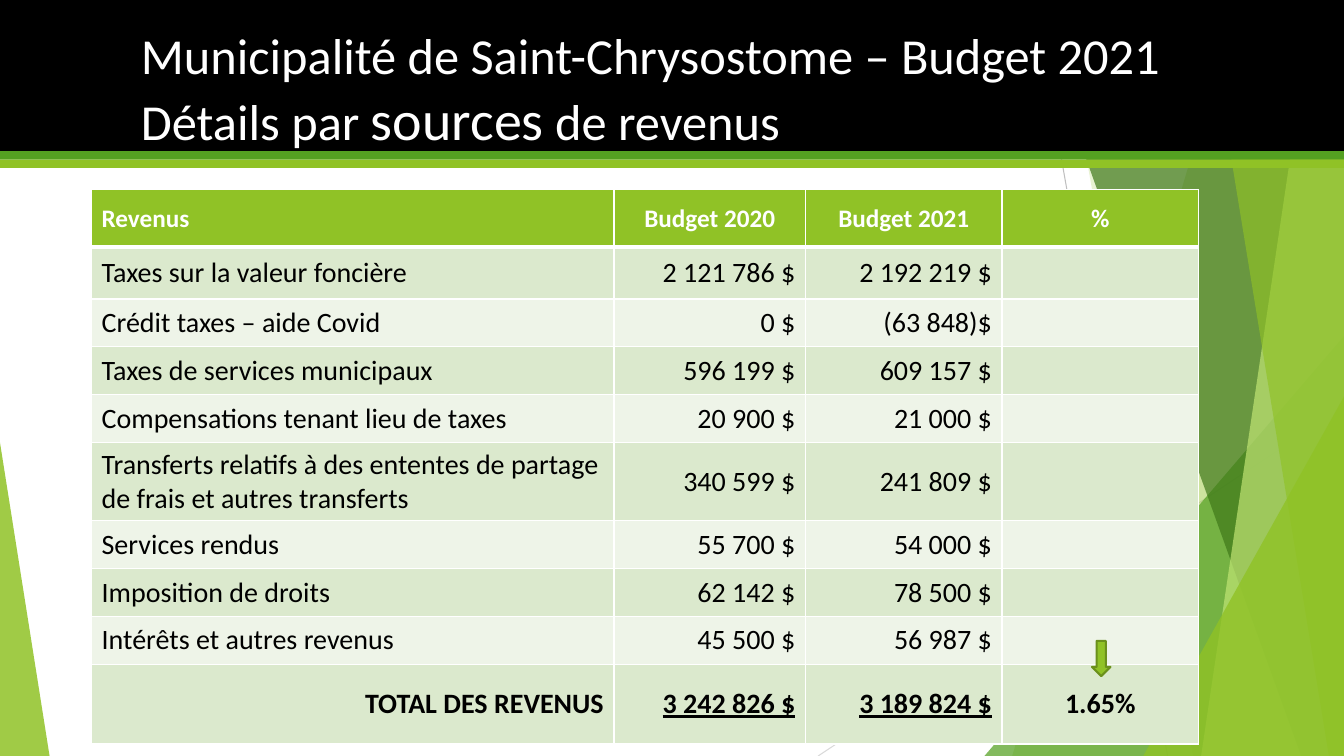
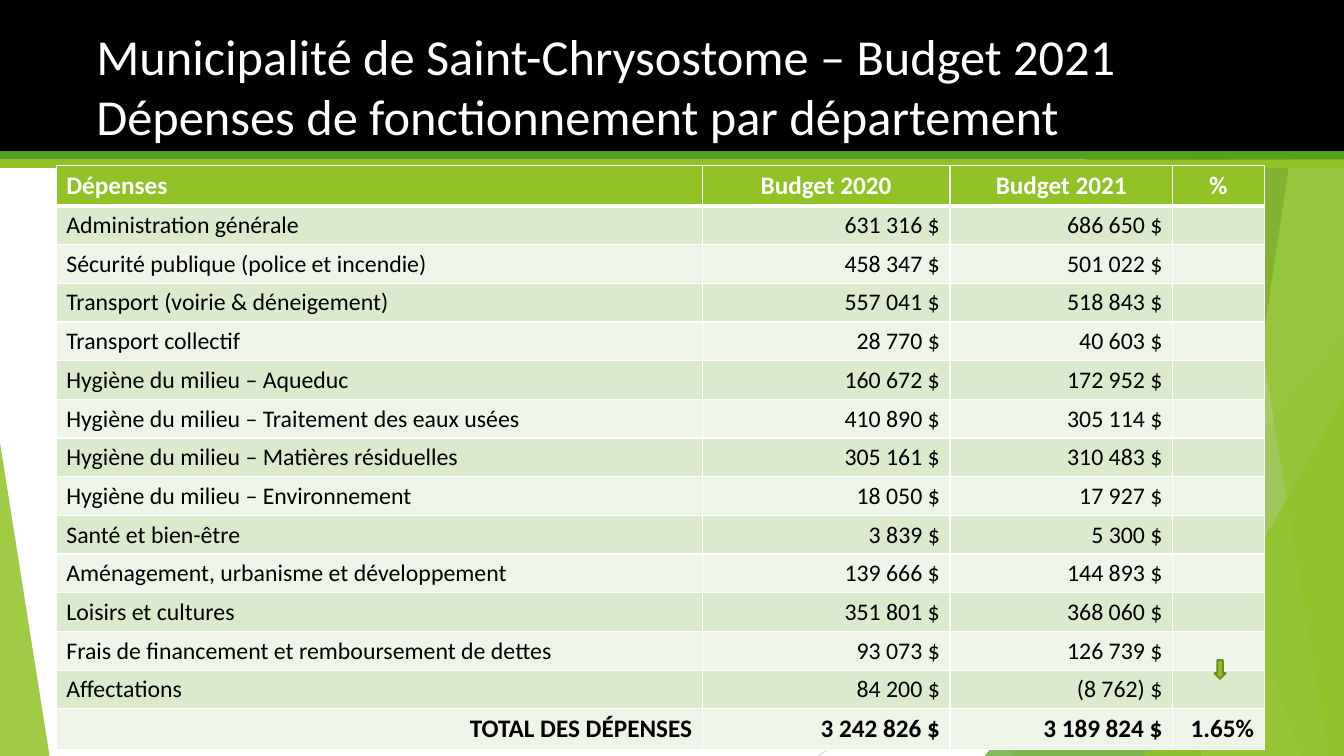
from lxml.etree import SubElement
from pptx import Presentation
from pptx.dml.color import RGBColor
from pptx.enum.shapes import MSO_CONNECTOR, MSO_SHAPE
from pptx.enum.text import MSO_ANCHOR, PP_ALIGN
from pptx.oxml.ns import qn
from pptx.util import Inches, Pt

COLUMNS, ROWS = 16, 9
UNIT = Inches(7.5) / ROWS
FONT = "Calibri"
BLACK, WHITE = "000000", "FFFFFF"
LIME, GREEN, FOREST, PALE = "90C226", "54A021", "3F7819", "C0E474"
ARROW_EDGE = "6B901C"
STRIPES = ("DBE9CD", "EEF4E8")
LEFT, CENTER, RIGHT = PP_ALIGN.LEFT, PP_ALIGN.CENTER, PP_ALIGN.RIGHT

RAYS = [(12.3, 0, 13.9, ROWS, "BFBFBF"), (COLUMNS, 4.84, 9.74, ROWS, "D9D9D9")]
BACK_PANELS = [(14.74, 12.05, LIME, 30), (12.6, 14.2, LIME, 20)]
FRONT_PANELS = [(12.25, 15.49, FOREST, 70), (15.64, 14.3, PALE, 70), (14.35, 15.82, LIME, 65)]
BANDS = [(0, 1.8, BLACK), (1.8, 0.1, GREEN), (1.9, 0.1, LIME)]

REVENUES = [
    ("Revenus", "Budget 2020", "Budget 2021", "%"),
    ("Taxes sur la valeur foncière", "2 121 786 $", "2 192 219 $", ""),
    ("Crédit taxes – aide Covid", "0 $", "(63 848)$", ""),
    ("Taxes de services municipaux", "596 199 $", "609 157 $", ""),
    ("Compensations tenant lieu de taxes", "20 900 $", "21 000 $", ""),
    ("Transferts relatifs à des ententes de partage de frais et autres transferts",
     "340 599 $", "241 809 $", ""),
    ("Services rendus", "55 700 $", "54 000 $", ""),
    ("Imposition de droits", "62 142 $", "78 500 $", ""),
    ("Intérêts et autres revenus", "45 500 $", "56 987 $", ""),
    ("TOTAL DES REVENUS", "3 242 826 $", "3 189 824 $", "1.65%"),
]
EXPENSES = [
    ("Dépenses", "Budget 2020", "Budget 2021", "%"),
    ("Administration générale", "631 316 $", "686 650 $", ""),
    ("Sécurité publique (police et incendie)", "458 347 $", "501 022 $", ""),
    ("Transport (voirie & déneigement)", "557 041 $", "518 843 $", ""),
    ("Transport collectif", "28 770 $", "40 603 $", ""),
    ("Hygiène du milieu – Aqueduc", "160 672 $", "172 952 $", ""),
    ("Hygiène du milieu – Traitement des eaux usées", "410 890 $", "305 114 $", ""),
    ("Hygiène du milieu – Matières résiduelles", "305 161 $", "310 483 $", ""),
    ("Hygiène du milieu – Environnement", "18 050 $", "17 927 $", ""),
    ("Santé et bien-être", "3 839 $", "5 300 $", ""),
    ("Aménagement, urbanisme et développement", "139 666 $", "144 893 $", ""),
    ("Loisirs et cultures", "351 801 $", "368 060 $", ""),
    ("Frais de financement et remboursement de dettes", "93 073 $", "126 739 $", ""),
    ("Affectations", "84 200 $", "(8 762) $", ""),
    ("TOTAL DES DÉPENSES", "3 242 826 $", "3 189 824 $", "1.65%"),
]


def grid(*cells):
    """Turn grid units into slide lengths."""
    return [round(cell * UNIT) for cell in cells]


def color(value):
    """Turn a hex string into a colour."""
    return RGBColor.from_string(value)


def paint(shape, fill, opacity=100, edge=None):
    """Give a shape its fill, opacity and outline, without shadow."""
    shape.shadow.inherit = False
    shape.fill.solid()
    shape.fill.fore_color.rgb = color(fill)
    if opacity < 100:
        tint = shape._element.spPr.find(".//" + qn("a:srgbClr"))
        SubElement(tint, qn("a:alpha"), val=str(opacity * 1000))
    if edge:
        shape.line.color.rgb = color(edge)
        shape.line.width = Pt(1.5)
    else:
        shape.line.fill.background()


def add_preset(slide, preset, area, fill, opacity=100, edge=None, apex=None):
    """Draw a preset shape on a grid area."""
    shape = slide.shapes.add_shape(preset, *grid(*area))
    if apex is not None:
        shape.adjustments[0] = apex
    paint(shape, fill, opacity, edge)


def add_ray(slide, x1, y1, x2, y2, tint):
    """Draw a thin background line."""
    ray = slide.shapes.add_connector(MSO_CONNECTOR.STRAIGHT, *grid(x1, y1, x2, y2))
    ray.line.color.rgb = color(tint)
    ray.line.width = Pt(0.75)
    SubElement(ray._element.spPr, qn("a:effectLst"))


def add_panel(slide, top, bottom, fill, opacity):
    """Draw a full-height panel from a slanted edge to the right side."""
    outline = slide.shapes.build_freeform(*grid(top, 0), scale=1.0)
    corners = [(COLUMNS, 0), (COLUMNS, ROWS), (bottom, ROWS)]
    outline.add_line_segments([grid(*corner) for corner in corners], close=True)
    paint(outline.convert_to_shape(), fill, opacity)


def add_backdrop(slide):
    """Draw the facets and bands that the slides share."""
    triangle = MSO_SHAPE.ISOSCELES_TRIANGLE
    for ray in RAYS:
        add_ray(slide, *ray)
    for panel in BACK_PANELS:
        add_panel(slide, *panel)
    add_preset(slide, triangle, (11.72, 4, 4.28, 5), GREEN, 72, apex=1)
    for panel in FRONT_PANELS:
        add_panel(slide, *panel)
    add_preset(slide, triangle, (13.61, 4.72, 2.39, 4.28), LIME, 80, apex=1)
    add_preset(slide, triangle, (0, 5.27, 0.59, 3.73), LIME, 85, apex=0)
    for top, height, fill in BANDS:
        add_preset(slide, MSO_SHAPE.RECTANGLE, (0, top, COLUMNS, height), fill)


def write(paragraph, text, size, tint=BLACK, bold=False, underline=False, align=LEFT):
    """Add formatted text to a paragraph, with a line break at each newline."""
    paragraph.alignment = align
    for number, line in enumerate(text.split("\n")):
        if number:
            paragraph.add_line_break()
        if line:
            run = paragraph.add_run()
            run.text = line
            font = run.font
            font.name, font.size = FONT, Pt(size)
            font.bold, font.underline = bold, underline
            font.color.rgb = color(tint)
    if not text:
        SubElement(paragraph._p, qn("a:endParaRPr"), sz=str(size * 100))


def add_title(slide, area, pieces):
    """Write the white title from pieces of text and size."""
    frame = slide.shapes.add_textbox(*grid(*area)).text_frame
    frame.word_wrap = True
    for text, size in pieces:
        write(frame.paragraphs[0], text, size, tint=WHITE)


def style_cell(cell, fill, bottom):
    """Give a cell its white borders, fill and middle anchor."""
    properties = cell._tc.get_or_add_tcPr()
    for side, points in (("L", 1), ("R", 1), ("T", 1), ("B", bottom)):
        border = SubElement(properties, qn("a:ln" + side), w=str(Pt(points)))
        SubElement(SubElement(border, qn("a:solidFill")), qn("a:srgbClr"), val=WHITE)
    cell.fill.solid()
    cell.fill.fore_color.rgb = color(fill)
    cell.vertical_anchor = MSO_ANCHOR.MIDDLE


def text_format(row, column, last, size, total):
    """Return the text format for a place in a budget table."""
    if row == 0:
        return dict(size=18, tint=WHITE, bold=True, align=CENTER if column else LEFT)
    if row < last:
        return dict(size=size, align=RIGHT if column else LEFT)
    return dict(size=total["size"], bold=True,
                underline=total["underline"] and column in (1, 2),
                align=total["share_align"] if column == 3 else RIGHT)


def add_budget(slide, corner, widths, heights, entries, size, total):
    """Draw a budget table with a header, striped rows and a total."""
    area = grid(*corner, sum(widths), sum(heights))
    table = slide.shapes.add_table(len(entries), len(widths), *area).table
    for column, width in zip(table.columns, grid(*widths)):
        column.width = width
    for row, height in zip(table.rows, grid(*heights)):
        row.height = height
    last = len(entries) - 1
    for r, entry in enumerate(entries):
        for c, text in enumerate(entry):
            cell = table.cell(r, c)
            style_cell(cell, STRIPES[(r - 1) % 2] if r else LIME, 1 if r else 3)
            write(cell.text_frame.paragraphs[0], text, **text_format(r, c, last, size, total))


def add_decrease(slide, area):
    """Draw the arrow that marks a decrease."""
    add_preset(slide, MSO_SHAPE.DOWN_ARROW, area, LIME, edge=ARROW_EDGE)


def main():
    """Build and save the two budget slides."""
    deck = Presentation()
    deck.slide_width, deck.slide_height = grid(COLUMNS, ROWS)
    heading = "Municipalité de Saint-Chrysostome – Budget 2021\n"

    revenue = deck.slides.add_slide(deck.slide_layouts[6])
    add_backdrop(revenue)
    add_title(revenue, (1.56, 0.23, 12.89, 1.72),
              [(heading + "Détails par ", 36), ("sources", 40), (" de revenus", 36)])
    add_budget(revenue, (1.09, 2.26), (6.22, 2.28, 2.34, 2.34),
               [0.68, 0.62] + [0.57] * 3 + [0.93] + [0.57] * 3 + [0.95], REVENUES, 20,
               dict(size=20, underline=True, share_align=CENTER))
    add_decrease(revenue, (13, 7.63, 0.22, 0.42))

    expense = deck.slides.add_slide(deck.slide_layouts[6])
    add_backdrop(expense)
    add_title(expense, (1.03, 0.24, 13.5, 1.73),
              [(heading + "Dépenses de fonctionnement par département", 36)])
    add_budget(expense, (0.67, 1.97), (7.69, 2.95, 2.65, 1.09),
               [0.46] * len(EXPENSES), EXPENSES, 17,
               dict(size=18, underline=False, share_align=RIGHT))
    add_decrease(expense, (14.46, 7.86, 0.13, 0.22))

    deck.save("out.pptx")


if __name__ == "__main__":
    main()
